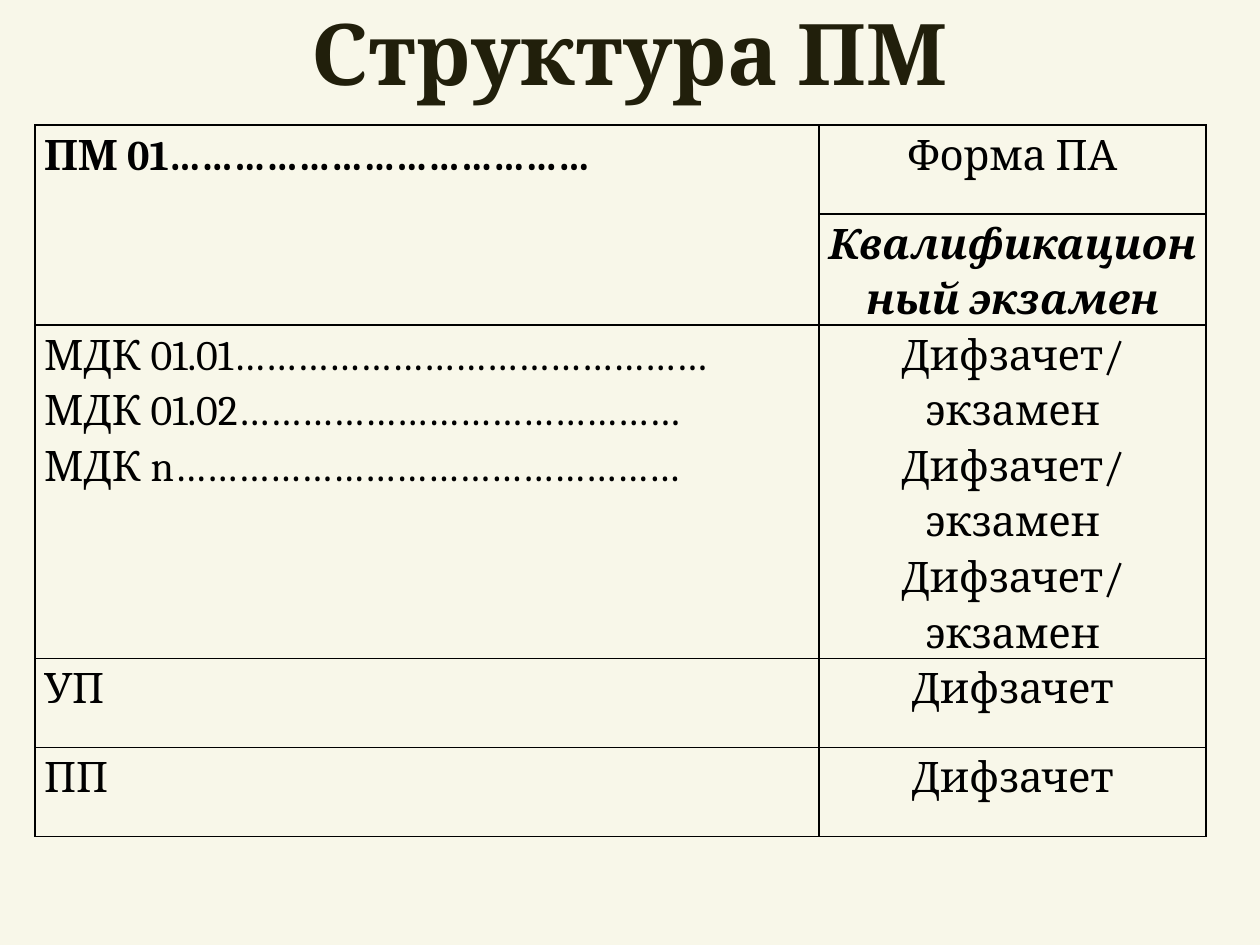
from lxml.etree import SubElement
from pptx import Presentation
from pptx.dml.color import RGBColor
from pptx.enum.text import MSO_ANCHOR, PP_ALIGN
from pptx.oxml.ns import qn
from pptx.util import Pt

PX = 914400 // 126
FONT = "Cambria"
BACKGROUND = RGBColor(0xF8, 0xF7, 0xE9)
TITLE_COLOR = RGBColor(0x21, 0x1F, 0x0B)
BLACK = RGBColor(0, 0, 0)

COLUMN_WIDTHS = (784, 387)
ROW_HEIGHTS = (89, 111, 333, 89, 89)
MODULE_ROWS = (
    (["ПМ 01…………………………………"], ["Форма ПА"]),
    ([], ["Квалификационный экзамен"]),
    (["МДК 01.01………………………………………",
      "МДК 01.02……………………………………",
      "МДК n…………………………………………"], ["Дифзачет/экзамен"] * 3),
    (["УП"], ["Дифзачет"]),
    (["ПП"], ["Дифзачет"]),
)
BOLD_CELLS = {(0, 0), (1, 1)}
ITALIC_CELLS = {(1, 1)}


def px(length):
    return length * PX


def add_run(paragraph, text, size, color, bold=False, italic=False):
    run = paragraph.add_run()
    run.text = text
    font = run.font
    font.name, font.size = FONT, Pt(size)
    font.bold, font.italic = bold, italic
    font.color.rgb = color


def add_title(slide, left, top, width, height):
    shape = slide.shapes.add_textbox(px(left), px(top), px(width), px(height))
    frame = shape.text_frame
    frame.word_wrap = True
    frame.vertical_anchor = MSO_ANCHOR.MIDDLE
    frame.margin_top = frame.margin_bottom = 0
    paragraph = frame.paragraphs[0]
    paragraph.alignment = PP_ALIGN.CENTER
    add_run(paragraph, "Структура ПМ", 48.6, TITLE_COLOR, bold=True)


def style_cell(cell):
    """Give the cell narrow margins, thin black borders and no fill."""
    cell.margin_left = cell.margin_right = px(9)
    cell.margin_top = cell.margin_bottom = 0
    properties = cell._tc.get_or_add_tcPr()
    for side in ("a:lnL", "a:lnR", "a:lnT", "a:lnB"):
        line = SubElement(properties, qn(side), w=str(Pt(1)))
        fill = SubElement(line, qn("a:solidFill"))
        SubElement(fill, qn("a:srgbClr"), val=str(BLACK))
    cell.fill.background()


def add_module_table(slide, left, top):
    frame = slide.shapes.add_table(
        len(ROW_HEIGHTS), len(COLUMN_WIDTHS), px(left), px(top),
        px(sum(COLUMN_WIDTHS)), px(sum(ROW_HEIGHTS)))
    table = frame.table
    table.first_row = table.horz_banding = False
    for column, width in zip(table.columns, COLUMN_WIDTHS):
        column.width = px(width)
    for row, height in zip(table.rows, ROW_HEIGHTS):
        row.height = px(height)
    table.cell(0, 0).merge(table.cell(1, 0))

    for row_index, row in enumerate(MODULE_ROWS):
        for column_index, lines in enumerate(row):
            position = (row_index, column_index)
            cell = table.cell(*position)
            style_cell(cell)
            for line_index, text in enumerate(lines):
                text_frame = cell.text_frame
                paragraph = (text_frame.add_paragraph() if line_index
                             else text_frame.paragraphs[0])
                paragraph.line_spacing = 1.15
                paragraph.alignment = PP_ALIGN.CENTER if column_index else PP_ALIGN.LEFT
                add_run(paragraph, text, 24, BLACK,
                        position in BOLD_CELLS, position in ITALIC_CELLS)


def main():
    presentation = Presentation()
    presentation.slide_width, presentation.slide_height = px(1260), px(945)
    slide = presentation.slides.add_slide(presentation.slide_layouts[6])
    slide.background.fill.solid()
    slide.background.fill.fore_color.rgb = BACKGROUND
    add_module_table(slide, 35, 125)
    add_title(slide, 95, 0, 1069, 102)
    presentation.save("out.pptx")


if __name__ == "__main__":
    main()
